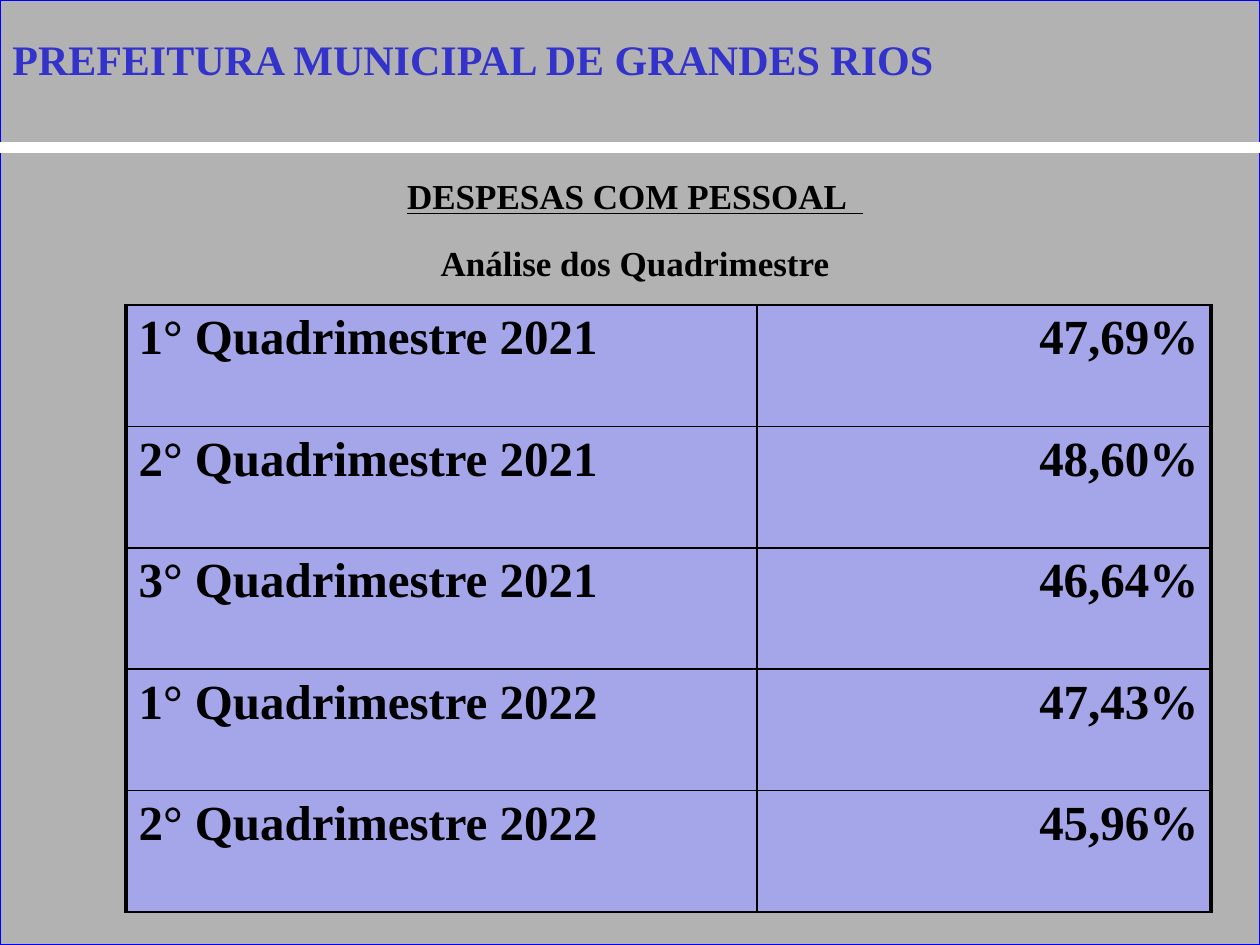
from dataclasses import dataclass

from lxml.etree import SubElement
from pptx import Presentation
from pptx.dml.color import RGBColor
from pptx.enum.shapes import MSO_CONNECTOR, MSO_SHAPE
from pptx.enum.text import PP_ALIGN
from pptx.oxml import parse_xml
from pptx.oxml.ns import qn
from pptx.util import Inches, Pt


@dataclass(frozen=True)
class Theme:
    font: str = "Times New Roman"
    title_size: int = 24
    heading_size: int = 20
    cell_size: int = 28
    background: str = "B2B2B2"
    frame: str = "0000FF"
    rule: str = "FFFFFF"
    title: str = "3333CC"
    text: str = "000000"
    cell: str = "A5A5E9"
    shadow: str = "808080"


theme = Theme()
NAMESPACE = "http://schemas.openxmlformats.org/drawingml/2006/main"


def write(paragraph, wording, size, color, align=PP_ALIGN.LEFT):
    paragraph.add_run().text = wording
    paragraph.alignment = align
    paragraph.font.name = theme.font
    paragraph.font.size = Pt(size)
    paragraph.font.bold = True
    paragraph.font.color.rgb = RGBColor.from_string(color)


def border(cell, widths):
    properties = cell._tc.get_or_add_tcPr()
    for position, (side, width) in enumerate(widths.items()):
        properties.insert(position, parse_xml(
            f'<a:ln{side} xmlns:a="{NAMESPACE}" w="{Pt(width)}"><a:solidFill>'
            f'<a:srgbClr val="{theme.text}"/></a:solidFill></a:ln{side}>'))


presentation = Presentation()
presentation.slide_width = Inches(10)
presentation.slide_height = Inches(7.5)
width, height = presentation.slide_width, presentation.slide_height
slide = presentation.slides.add_slide(presentation.slide_layouts[6])
shapes = slide.shapes

backdrop = shapes.add_shape(MSO_SHAPE.RECTANGLE, 0, 0, width, height)
backdrop.shadow.inherit = False
backdrop.fill.solid()
backdrop.fill.fore_color.rgb = RGBColor.from_string(theme.background)
backdrop.line.color.rgb = RGBColor.from_string(theme.frame)
backdrop.line.width = Pt(0.75)

rule_top = Inches(1.17)
header_rule = shapes.add_connector(MSO_CONNECTOR.STRAIGHT, 0, rule_top, width, rule_top)
header_rule.line.color.rgb = RGBColor.from_string(theme.rule)
header_rule.line.width = Pt(6)
SubElement(header_rule._element.spPr, qn("a:effectLst"))

heading = shapes.add_textbox(Inches(0.58), rule_top, Inches(8.92), Inches(5.11)).text_frame
heading.word_wrap = True
for index, wording in enumerate(["DESPESAS COM PESSOAL  ", "Análise dos Quadrimestre"]):
    paragraph = heading.add_paragraph() if index else heading.paragraphs[0]
    write(paragraph, wording, theme.heading_size, theme.text, PP_ALIGN.CENTER)
    paragraph.line_spacing = 1.5
    paragraph.space_before = Pt(2)
    paragraph.runs[0].font.underline = index == 0

expenses = [
    ("1° Quadrimestre 2021", "47,69%"),
    ("2° Quadrimestre 2021", "48,60%"),
    ("3° Quadrimestre 2021", "46,64%"),
    ("1° Quadrimestre 2022", "47,43%"),
    ("2° Quadrimestre 2022", "45,96%"),
]
columns = [
    (5.01, PP_ALIGN.LEFT, {"L": 2.25, "R": 1, "T": 1, "B": 1}),
    (3.6, PP_ALIGN.RIGHT, {"L": 1, "R": 2.25, "T": 1, "B": 1}),
]
table = shapes.add_table(len(expenses), len(columns), Inches(1), Inches(2.42),
                         Inches(8.61), Inches(4.82)).table
table.first_row = False
table.horz_banding = False
for column, (column_width, align, widths) in enumerate(columns):
    table.columns[column].width = Inches(column_width)
    for row, expense in enumerate(expenses):
        cell = table.cell(row, column)
        write(cell.text_frame.paragraphs[0], expense[column],
              theme.cell_size, theme.text, align)
        cell.fill.solid()
        cell.fill.fore_color.rgb = RGBColor.from_string(theme.cell)
        border(cell, widths)

title = shapes.add_textbox(0, Inches(0.22), Inches(9.49), Inches(0.5)).text_frame
title.word_wrap = True
write(title.paragraphs[0], "PREFEITURA MUNICIPAL DE GRANDES RIOS",
      theme.title_size, theme.title)
title.paragraphs[0].space_before = Pt(2)
title.paragraphs[0].runs[0].font._element.append(parse_xml(
    f'<a:effectLst xmlns:a="{NAMESPACE}"><a:outerShdw dist="{Pt(2)}" dir="2700000">'
    f'<a:srgbClr val="{theme.shadow}"/></a:outerShdw></a:effectLst>'))

presentation.save("out.pptx")
